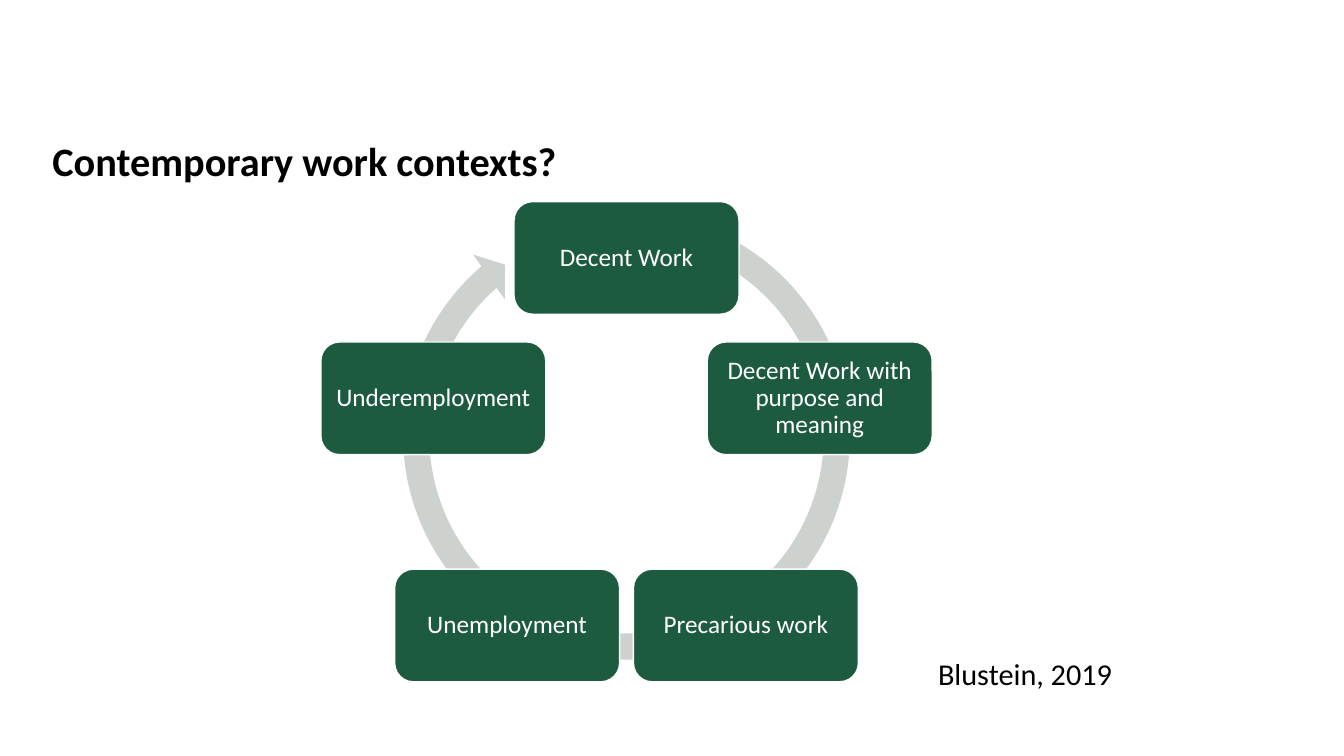
from math import cos, radians, sin

from pptx import Presentation
from pptx.dml.color import RGBColor
from pptx.enum.shapes import MSO_SHAPE as Shape
from pptx.enum.text import MSO_ANCHOR as Anchor, PP_ALIGN as Align
from pptx.util import Cm, Pt

GREEN = RGBColor(0x1D, 0x5B, 0x41)
GREY = RGBColor(0xCD, 0xD2, 0xCF)
WHITE = RGBColor(0xFF, 0xFF, 0xFF)
BLACK = RGBColor(0x00, 0x00, 0x00)


def write(box, text, size, color, bold=False):
    frame = box.text_frame
    frame.word_wrap = True
    frame.text = text
    para = frame.paragraphs[0]
    font = para.runs[0].font
    font.name, font.size, font.bold = "Calibri", Pt(size), bold
    font.color.rgb = color
    return frame, para


deck = Presentation()
deck.slide_width, deck.slide_height = Cm(33.87), Cm(19.05)
page = deck.slides.add_slide(deck.slide_layouts[6])

# Title
title = page.shapes.add_textbox(Cm(1.07), Cm(2.29), Cm(29.21), Cm(3.68))
frame, para = write(title, "Contemporary work contexts?", 28.8, BLACK, True)
frame.vertical_anchor = Anchor.MIDDLE
para.line_spacing = 0.9

# Circular arrow behind the work contexts
center_x, center_y = 15.79, 11.62
arrow_size = 11.99
arrow = page.shapes.add_shape(
    Shape.CIRCULAR_ARROW, Cm(center_x - arrow_size / 2), Cm(5),
    Cm(arrow_size), Cm(arrow_size))
arrow.shadow.inherit = False
for index, value in enumerate((0.055, 3.307, 137.51, 174.01, 0.058)):
    arrow.adjustments[index] = value
arrow.fill.solid()
arrow.fill.fore_color.rgb = GREY
arrow.line.fill.background()

# Work contexts, evenly spaced clockwise from the top
contexts = ["Decent Work", "Decent Work with purpose and meaning",
            "Precarious work", "Unemployment", "Underemployment"]
radius, width, height = 5.12, 5.67, 2.84
for index, context in enumerate(contexts):
    angle = radians(index * 360 / len(contexts))
    left = center_x + radius * sin(angle) - width / 2
    top = center_y - radius * cos(angle) - height / 2
    box = page.shapes.add_shape(
        Shape.ROUNDED_RECTANGLE, Cm(left), Cm(top), Cm(width), Cm(height))
    box.shadow.inherit = False
    box.fill.solid()
    box.fill.fore_color.rgb = GREEN
    box.line.color.rgb = WHITE
    box.line.width = Pt(1)
    frame, para = write(box, context, 18, WHITE)
    frame.vertical_anchor = Anchor.MIDDLE
    frame.margin_left = frame.margin_right = Cm(0.18)
    frame.margin_top = frame.margin_bottom = Cm(0.18)
    para.alignment = Align.CENTER
    para.line_spacing = 0.9

# Citation
citation = page.shapes.add_textbox(Cm(23.39), Cm(16.38), Cm(7.85), Cm(1.17))
write(citation, "Blustein, 2019", 21.6, BLACK)

deck.save("out.pptx")
